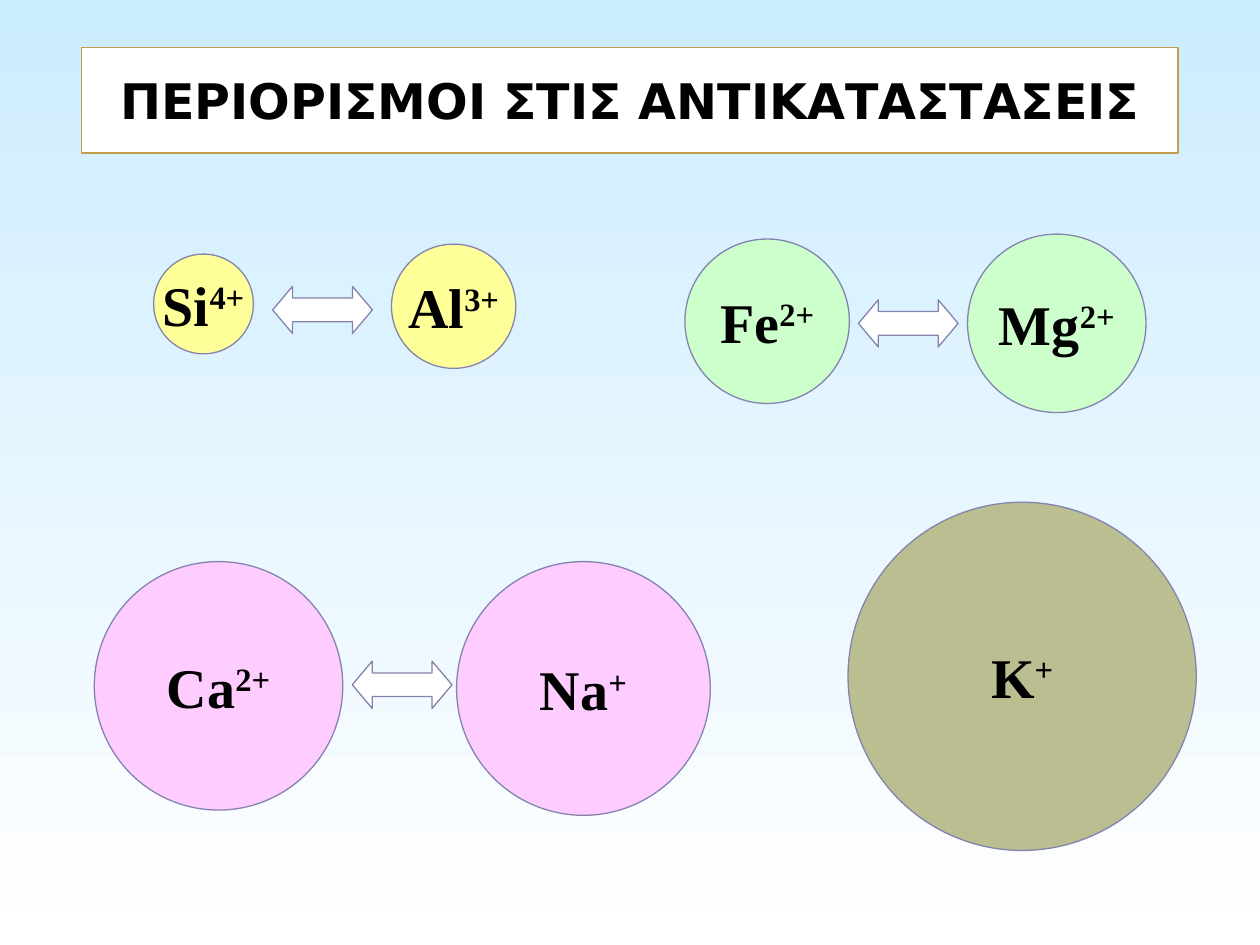
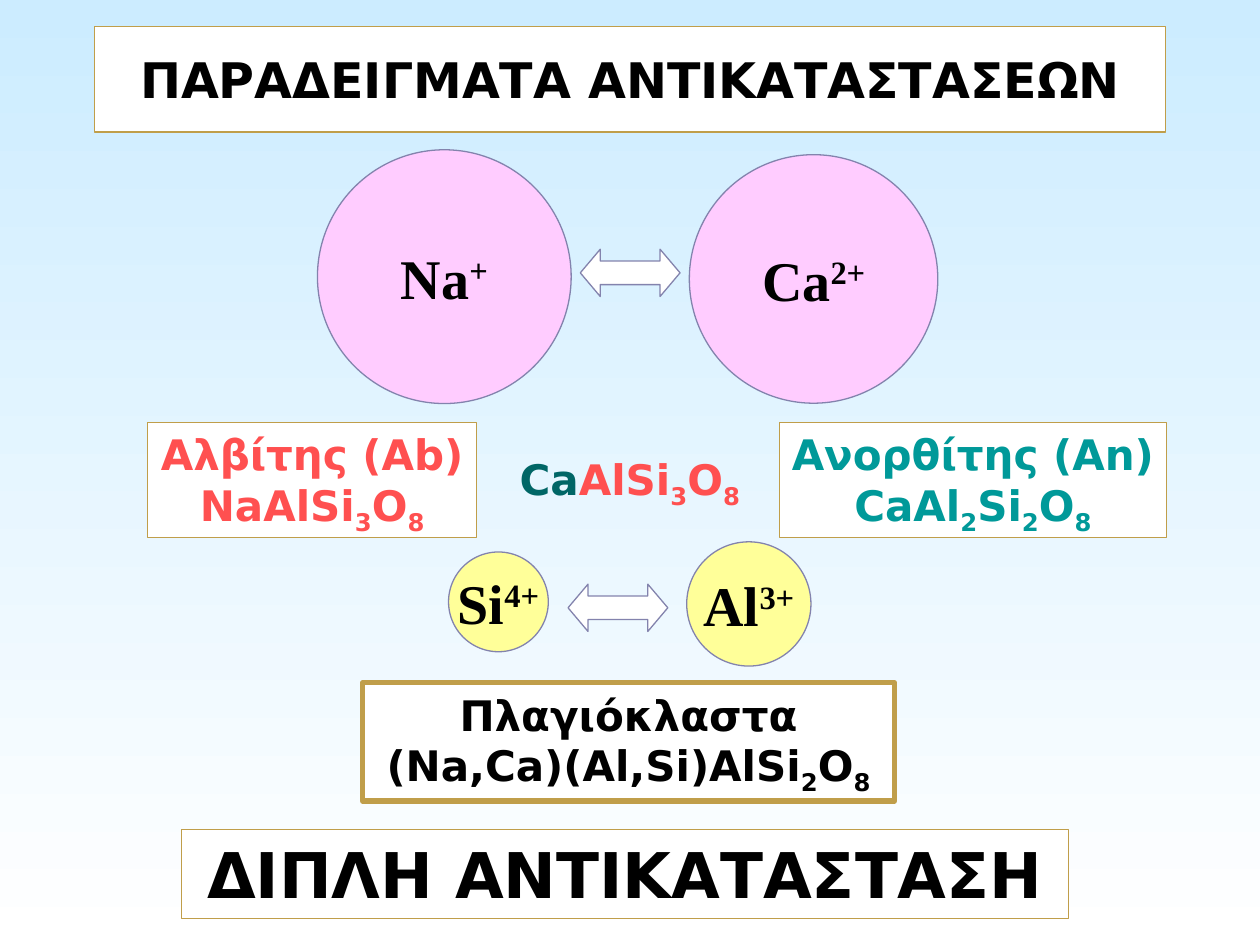
from itertools import groupby

from pptx import Presentation
from pptx.dml.color import RGBColor
from pptx.enum.shapes import MSO_SHAPE
from pptx.enum.text import MSO_ANCHOR, PP_ALIGN
from pptx.util import Pt

OVAL, RECT = MSO_SHAPE.OVAL, MSO_SHAPE.RECTANGLE
ARROW = MSO_SHAPE.LEFT_RIGHT_ARROW
TOP, MIDDLE = MSO_ANCHOR.TOP, MSO_ANCHOR.MIDDLE
CENTER = PP_ALIGN.CENTER

BLACK = RGBColor(0x00, 0x00, 0x00)
WHITE = RGBColor(0xFF, 0xFF, 0xFF)
SKY = RGBColor(0xCC, 0xEC, 0xFF)
GOLD = RGBColor(0xC0, 0x9E, 0x4A)
SLATE = RGBColor(0x83, 0x83, 0xAD)
YELLOW = RGBColor(0xFF, 0xFF, 0x99)
GREEN = RGBColor(0xCC, 0xFF, 0xCC)
PINK = RGBColor(0xFF, 0xCC, 0xFF)
OLIVE = RGBColor(0xBA, 0xBE, 0x90)
RED = RGBColor(0xFF, 0x50, 0x50)
TEAL = RGBColor(0x00, 0x99, 0x99)
PINE = RGBColor(0x00, 0x66, 0x66)

SANS, SERIF = "DejaVu Sans", "Times New Roman"
SUPER, SUB = 30000, -25000

# Each ion: charge, diameter, fill
IONS = {
    "Si": ("4+", 57, YELLOW),
    "Al": ("3+", 71, YELLOW),
    "Fe": ("2+", 94, GREEN),
    "Mg": ("2+", 102, GREEN),
    "Ca": ("2+", 142, PINK),
    "Na": ("+", 145, PINK),
    "K": ("+", 199, OLIVE),
}


def formula(text, color):
    """Split a formula into runs, with its digits as subscripts."""
    return [("".join(part), SUB if digit else 0, color)
            for digit, part in groupby(text, str.isdigit)]


class Deck:
    def __init__(self):
        self.prs = Presentation()
        self.prs.slide_width, self.prs.slide_height = Pt(720), Pt(540)
        self.slide = None

    def page(self):
        self.slide = self.prs.slides.add_slide(self.prs.slide_layouts[6])
        fill = self.slide.background.fill
        fill.gradient()
        fill.gradient_angle = 270
        for stop, color in zip(fill.gradient_stops, (SKY, WHITE)):
            stop.color.rgb = color

    def shape(self, kind, x, y, w, h, fill, line, width=0.75):
        item = self.slide.shapes.add_shape(kind, Pt(x), Pt(y), Pt(w), Pt(h))
        item.shadow.inherit = False
        item.fill.solid()
        item.fill.fore_color.rgb = fill
        item.line.color.rgb = line
        item.line.width = Pt(width)
        return item

    def text(self, item, lines, size, face=SANS, anchor=TOP):
        frame = item.text_frame
        frame.word_wrap = False
        frame.vertical_anchor = anchor
        for i, runs in enumerate(lines):
            para = frame.add_paragraph() if i else frame.paragraphs[0]
            para.alignment = CENTER
            for words, base, color in runs:
                run = para.add_run()
                run.text = words
                font = run.font
                font.name, font.size, font.bold = face, Pt(size), True
                font.color.rgb = color
                if base:
                    run._r.get_or_add_rPr().set("baseline", str(base))

    def box(self, x, y, w, h, lines, size=24, width=0.75, anchor=TOP):
        item = self.shape(RECT, x, y, w, h, WHITE, GOLD, width)
        self.text(item, lines, size, anchor=anchor)

    def title(self, words, y, w):
        x = (720 - w) / 2
        self.box(x, y, w, 60.5, [[(words, 0, BLACK)]], 28, anchor=MIDDLE)

    def label(self, x, y, w, h, runs):
        item = self.slide.shapes.add_textbox(Pt(x), Pt(y), Pt(w), Pt(h))
        self.text(item, [runs], 24)

    def ion(self, name, x, y):
        charge, size, fill = IONS[name]
        item = self.shape(OVAL, x, y, size, size, fill, SLATE)
        runs = [(name, 0, BLACK), (charge, SUPER, BLACK)]
        self.text(item, [runs], 32, SERIF, MIDDLE)

    def arrow(self, x, y):
        item = self.shape(ARROW, x, y, 57, 27, WHITE, SLATE)
        item.adjustments[0], item.adjustments[1] = 0.5, 0.422


def limits(deck):
    deck.page()
    for name, x, y in (("Si", 87.8, 145.2), ("Al", 223.7, 139.5),
                       ("Fe", 391.4, 136.6), ("Mg", 552.9, 133.8),
                       ("Ca", 53.9, 320.9), ("Na", 260.9, 320.9),
                       ("K", 484.6, 287)):
        deck.ion(name, x, y)
    for x, y in ((155.8, 163.6), (490.5, 171.3), (201.3, 377.8)):
        deck.arrow(x, y)
    deck.title("ΠΕΡΙΟΡΙΣΜΟΙ ΣΤΙΣ ΑΝΤΙΚΑΤΑΣΤΑΣΕΙΣ", 27, 626.4)


def samples(deck):
    deck.page()
    # End members and the step between them
    for x, w, name, mix, color in (
            (84.4, 188, "Αλβίτης (Ab)", "NaAlSi3O8", RED),
            (445.3, 221.3, "Ανορθίτης (An)", "CaAl2Si2O8", TEAL)):
        deck.box(x, 241.6, w, 65.6,
                 [[(name, 0, color)], formula(mix, color)])
    deck.label(288.4, 255.6, 143, 36,
               [("Ca", 0, PINE)] + formula("AlSi3O8", RED))
    deck.box(103.7, 474, 507, 51, [[("ΔΙΠΛΗ ΑΝΤΙΚΑΤΑΣΤΑΣΗ", 0, BLACK)]], 36)

    # Paired swaps
    for name, x, y in (("Ca", 393.9, 88.4), ("Na", 181.4, 85.6),
                       ("Si", 256.3, 315.4), ("Al", 392.4, 309.6)):
        deck.ion(name, x, y)
    for x, y in ((331.6, 142.4), (324.6, 333.8)):
        deck.arrow(x, y)

    # Result
    deck.box(207.2, 390.2, 304, 67.6,
             [[("Πλαγιόκλαστα", 0, BLACK)],
              formula("(Na,Ca)(Al,Si)AlSi2O8", BLACK)], width=3)
    deck.title("ΠΑΡΑΔΕΙΓΜΑΤΑ ΑΝΤΙΚΑΤΑΣΤΑΣΕΩΝ", 15, 612)


def main():
    deck = Deck()
    limits(deck)
    samples(deck)
    deck.prs.save("out.pptx")


if __name__ == "__main__":
    main()
